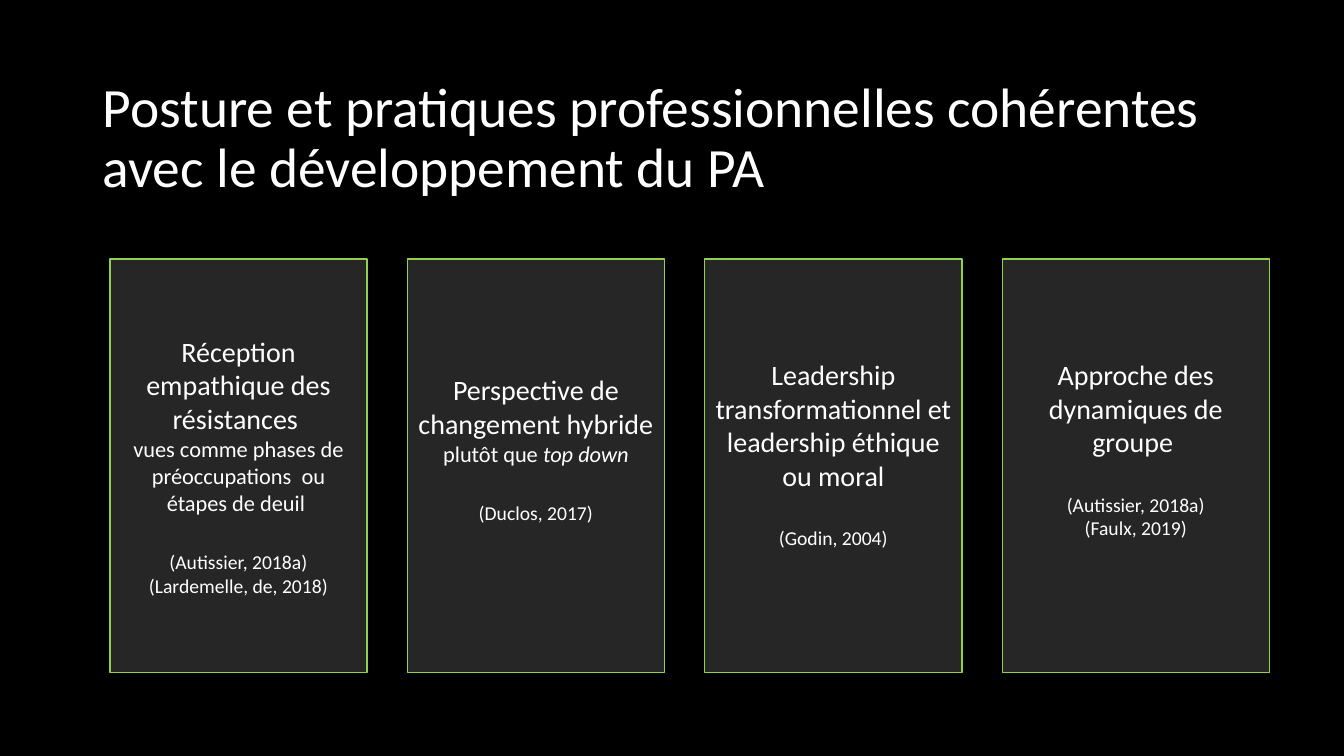
"""Build the slide on professional stances as a row of four cards."""
from pptx import Presentation
from pptx.dml.color import RGBColor as Rgb
from pptx.enum.shapes import MSO_SHAPE as Kind
from pptx.enum.text import MSO_ANCHOR as Anchor, MSO_AUTO_SIZE as Auto, PP_ALIGN as Align
from pptx.util import Inches, Pt

TITLE = "Posture et pratiques professionnelles cohérentes avec le développement du PA"
CARDS = [
    {"head": "Réception empathique des résistances ",
     "note": [("vues comme phases de préoccupations  ou étapes de deuil ", False)],
     "refs": ["(Autissier, 2018a)", "(Lardemelle, de, 2018)"],
     "width": 2.55, "foot": 0.05},
    {"head": "Perspective de changement hybride ",
     "note": [("plutôt que ", False), ("top down", True)],
     "refs": ["(Duclos, 2017)"],
     "width": 2.55, "foot": 0.39},
    {"head": "Leadership transformationnel et leadership éthique ou moral",
     "note": [],
     "refs": ["(Godin, 2004)"],
     "width": 2.55, "foot": 0.29},
    {"head": "Approche des dynamiques de groupe ",
     "note": [],
     "refs": ["(Autissier, 2018a)", "(Faulx, 2019)"],
     "width": 2.65, "foot": 0.39},
]
COLORS = {"back": "000000", "card": "262626", "edge": "92D050", "text": "FFFFFF"}
FONT = "Calibri"
LEFT, TOP, HEIGHT, GAP = 1.09, 2.57, 4.1, 0.4
REF_GAP = 24.4


def color(name):
    return Rgb.from_string(COLORS[name])


def style(para, size, align):
    para.alignment = align
    para.font.name = FONT
    para.font.size = Pt(size)
    para.font.color.rgb = color("text")


def add_card(slide, card, left):
    box = slide.shapes.add_shape(Kind.RECTANGLE, Inches(left), Inches(TOP),
                                 Inches(card["width"]), Inches(HEIGHT))
    box.shadow.inherit = False
    box.fill.solid()
    box.fill.fore_color.rgb = color("card")
    box.line.color.rgb = color("edge")
    box.line.width = Pt(1)
    frame = box.text_frame
    frame.word_wrap = True
    frame.vertical_anchor = Anchor.MIDDLE
    frame.margin_bottom = Inches(card["foot"])

    head = frame.paragraphs[0]
    head.text = card["head"]
    style(head, 20, Align.CENTER)
    if card["note"]:
        note = frame.add_paragraph()
        style(note, 16, Align.CENTER)
        for text, slant in card["note"]:
            run = note.add_run()
            run.text = text
            if slant:
                run.font.italic = True
    for row, text in enumerate(card["refs"]):
        ref = frame.add_paragraph()
        ref.text = text
        style(ref, 14, Align.CENTER)
        if row == 0:
            ref.space_before = Pt(REF_GAP)


def main():
    deck = Presentation()
    deck.slide_width, deck.slide_height = Inches(13.33), Inches(7.5)
    slide = deck.slides.add_slide(deck.slide_layouts[5])
    slide.background.fill.solid()
    slide.background.fill.fore_color.rgb = color("back")

    title = slide.shapes.title
    title.left, title.top = Inches(0.92), Inches(0.66)
    title.width, title.height = Inches(11.5), Inches(1.45)
    frame = title.text_frame
    frame.text = TITLE
    frame.word_wrap = True
    frame.auto_size = Auto.NONE
    frame.vertical_anchor = Anchor.MIDDLE
    style(frame.paragraphs[0], 39.6, Align.LEFT)
    frame.paragraphs[0].line_spacing = 0.9

    left = LEFT
    for card in CARDS:
        add_card(slide, card, left)
        left += card["width"] + GAP
    deck.save("out.pptx")


if __name__ == "__main__":
    main()
